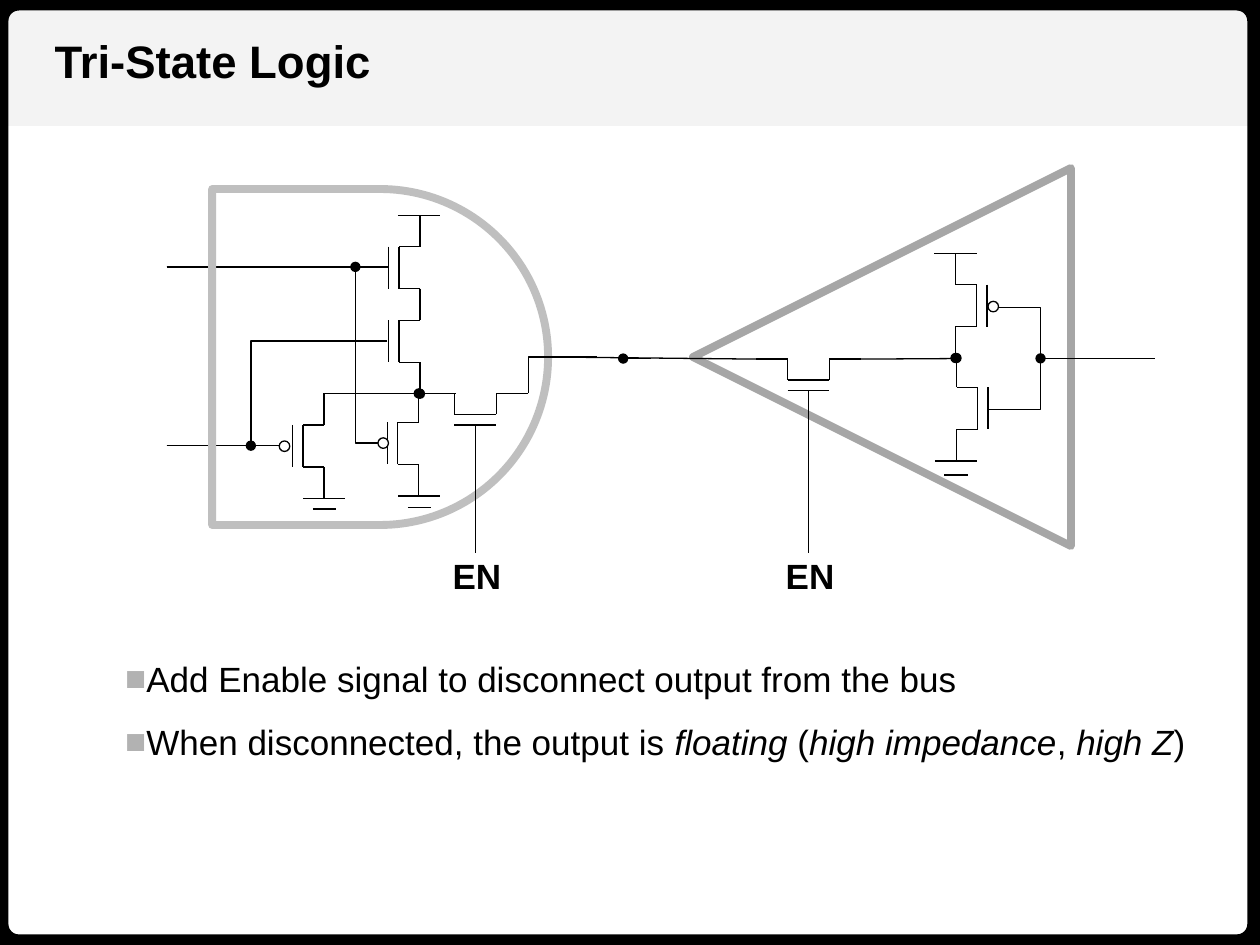
from lxml.etree import SubElement
from pptx import Presentation
from pptx.dml.color import RGBColor
from pptx.enum.shapes import MSO_CONNECTOR, MSO_SHAPE
from pptx.enum.text import MSO_ANCHOR, MSO_AUTO_SIZE, PP_ALIGN
from pptx.oxml.ns import qn
from pptx.util import Inches, Pt


def paint(color_format, hex_color):
    color_format.rgb = RGBColor.from_string(hex_color)


def cells(*counts):
    """Lengths for counts of the square grid: 120 columns by 90 rows, 1/12 inch each."""
    return [Inches(count / 12) for count in counts]


class CircuitSlide:
    font, ink, wire_width = "Arial", "000000", 0.75

    def __init__(self, deck):
        self.slide = deck.slides.add_slide(deck.slide_layouts[1])
        self.shapes = self.slide.shapes
        self.title, self.body = self.slide.placeholders

    def stroke(self, line, color, width):
        line.fill.solid()
        paint(line.fill.fore_color, color)
        line.width = Pt(width)

    def outline(self, kind, left, top, width, height, fill=None, color=None, weight=0.75):
        shape = self.shapes.add_shape(kind, *cells(left, top, width, height))
        shape.shadow.inherit = False
        if fill:
            shape.fill.solid()
            paint(shape.fill.fore_color, fill)
        else:
            shape.fill.background()
        if color:
            self.stroke(shape.line, color, weight)
            SubElement(shape.element.spPr.find(qn("a:ln")), qn("a:round"))
        else:
            shape.line.fill.background()
        return shape

    def wire(self, start, end, start_dot=False, end_dot=False, bend=None):
        """Straight wire, or an elbow turning at share `bend` of its width."""
        kind = MSO_CONNECTOR.STRAIGHT if bend is None else MSO_CONNECTOR.ELBOW
        wire = self.shapes.add_connector(kind, *cells(*start, *end))
        self.stroke(wire.line, self.ink, self.wire_width)
        properties = wire.element.spPr
        for tag, wanted in (("a:headEnd", start_dot), ("a:tailEnd", end_dot)):
            if wanted:
                SubElement(properties.find(qn("a:ln")), qn(tag), type="oval")
        SubElement(properties, qn("a:effectLst"))
        if bend is not None:
            guides = next(properties.iter(qn("a:avLst")))
            SubElement(guides, qn("a:gd"), name="adj1", fmla=f"val {bend * 100000}")

    def transistor(self, x, y, side=1, lead=3, across=False, start_dot=False, end_dot=False):
        """Channel running down from (x, y), or to the right if across."""
        def place(along, aside):
            return (x + along, y + aside) if across else (x + side * aside, y + along)

        far = lead + 4
        route = [(0, 0), (lead, 0), (lead, 2), (far, 2), (far, 0), (far + 3, 0)]
        if lead == 0:
            route = route[1:]
        points = [place(*step) for step in route]
        last = len(points) - 2
        for i, (start, end) in enumerate(zip(points, points[1:])):
            self.wire(start, end, start_dot and i == 0, end_dot and i == last)
        self.wire(place(lead, 3), place(far, 3))

    def rail(self, x, y, width=4):
        self.wire((x - width / 2, y), (x + width / 2, y))

    def ground(self, x, y, gap):
        self.rail(x, y)
        self.rail(x, y + gap, 2.2)

    def bubble(self, left, top):
        self.outline(MSO_SHAPE.OVAL, left, top, 1, 1, "FFFFFF", self.ink)

    def format_text(self, holder, left, top, width, height, size, bold=False, wrap=False):
        holder.left, holder.top, holder.width, holder.height = cells(left, top, width, height)
        frame = holder.text_frame
        frame.word_wrap = wrap
        frame.auto_size = MSO_AUTO_SIZE.SHAPE_TO_FIT_TEXT
        frame.vertical_anchor = MSO_ANCHOR.TOP
        for paragraph in frame.paragraphs:
            paragraph.alignment = PP_ALIGN.LEFT
            font = paragraph.font
            font.name, font.size, font.bold = self.font, Pt(size), bold
            paint(font.color, self.ink)

    def heading(self, text, *box):
        self.title.text_frame.text = text
        self.format_text(self.title, *box, size=26, bold=True)

    def label(self, text, *box):
        label = self.shapes.add_textbox(*cells(*box))
        label.text_frame.text = text
        self.format_text(label, *box, size=20, bold=True)

    def bullets(self, items, *box):
        """Each item is a list of runs, upright and italic in turn."""
        frame = self.body.text_frame
        for i, runs in enumerate(items):
            paragraph = frame.add_paragraph() if i else frame.paragraphs[0]
            for j, text in enumerate(runs):
                run = paragraph.add_run()
                run.text = text
                run.font.italic = j % 2 == 1
        self.format_text(self.body, *box, size=20, wrap=True)
        frame.margin_left = Inches(0.33)
        for paragraph in frame.paragraphs:
            paragraph.line_spacing = 1.5
            paragraph.space_before = Pt(0)
            properties = paragraph._p.get_or_add_pPr()
            properties.set("marL", "0")
            properties.set("indent", str(Inches(0.38)))
            bullet_color = SubElement(properties, qn("a:buClr"))
            SubElement(bullet_color, qn("a:srgbClr"), val="B2B2B2")
            SubElement(properties, qn("a:buChar"), char="■")
            # Default run properties close the paragraph properties
            properties.append(properties.find(qn("a:defRPr")))

    def backdrop(self):
        header = self.outline(MSO_SHAPE.RECTANGLE, 0, 0, 120, 12, "F3F3F3")
        border = self.outline(MSO_SHAPE.ROUNDED_RECTANGLE, -0.2, 0, 120, 90,
                              color=self.ink, weight=12)
        border.adjustments[0] = 0.022
        for part in (header, border):
            self.title.element.addprevious(part.element)


def draw_nand_gate(page):
    for row, reach in ((25.42, 37), (42.45, 26.9)):
        for end in (20.15, reach):
            page.wire((15.87, row), (end, row))
    page.outline(MSO_SHAPE.FLOWCHART_DELAY, 20.2, 18, 32, 32, color="BFBFBF", weight=4.5)
    page.rail(39.9, 20.5)
    page.transistor(40, 20.5, side=-1)
    page.transistor(40, 30.5, side=-1, lead=0, end_dot=True)
    page.transistor(30.87, 37.47, side=-1)
    page.transistor(39.88, 37.47, side=-1, lead=2.75, start_dot=True)
    page.ground(30.9, 47.47, 1)
    page.ground(39.95, 47.25, 1.1)
    page.wire((30.87, 37.47), (43.4, 37.47))
    page.wire((36, 42.2), (33.85, 25.42), end_dot=True, bend=1)
    page.wire((36.9, 32.47), (23.9, 42.45), end_dot=True, bend=1)
    page.bubble(26.6, 42)
    page.bubble(36, 41.7)


def draw_inverter(page):
    triangle = page.outline(MSO_SHAPE.ISOSCELES_TRIANGLE, 66, 16, 36, 36,
                            color="A6A6A6", weight=4.5)
    triangle.rotation = 270
    page.rail(91, 24.13)
    page.transistor(91, 24.1, end_dot=True)
    page.transistor(91.1, 34.1, lead=2.8, start_dot=True)
    page.ground(91.05, 43.9, 1.35)
    page.wire((110, 34.13), (99.1, 34.13), end_dot=True)
    page.wire((99.1, 34), (94.2, 29.3), bend=0)
    page.wire((99.1, 33.6), (94.1, 39), bend=0)
    page.wire((91, 34.15), (82, 34.2))
    page.bubble(94.1, 28.7)


def draw_bus(page):
    page.wire((50.3, 37.47), (56.9, 34), bend=0)
    page.wire((52.2, 34), (72, 34.2))
    page.wire((62, 34.15), (59.35, 34.15), end_dot=True)
    for left, top in ((40.27, 37.47), (72, 34.2)):
        page.transistor(left, top, across=True)
        gate = left + 5
        page.wire((gate, top + 3), (gate, 52.7))
        page.label("EN", gate - 3.35, 52.2, 7.1, 5.3)


def main():
    deck = Presentation()
    deck.slide_width, deck.slide_height = cells(120, 90)
    page = CircuitSlide(deck)
    page.backdrop()
    page.heading("Tri-State Logic", 4, 2.55, 32.9, 6.5)
    page.bullets([
        ["Add Enable signal to disconnect output from the bus"],
        ["When disconnected, the output is ", "floating", " (",
         "high impedance", ", ", "high Z", ")"],
    ], 3.4, 60, 112.7, 13.3)
    draw_nand_gate(page)
    draw_inverter(page)
    draw_bus(page)
    deck.save("out.pptx")


if __name__ == "__main__":
    main()
